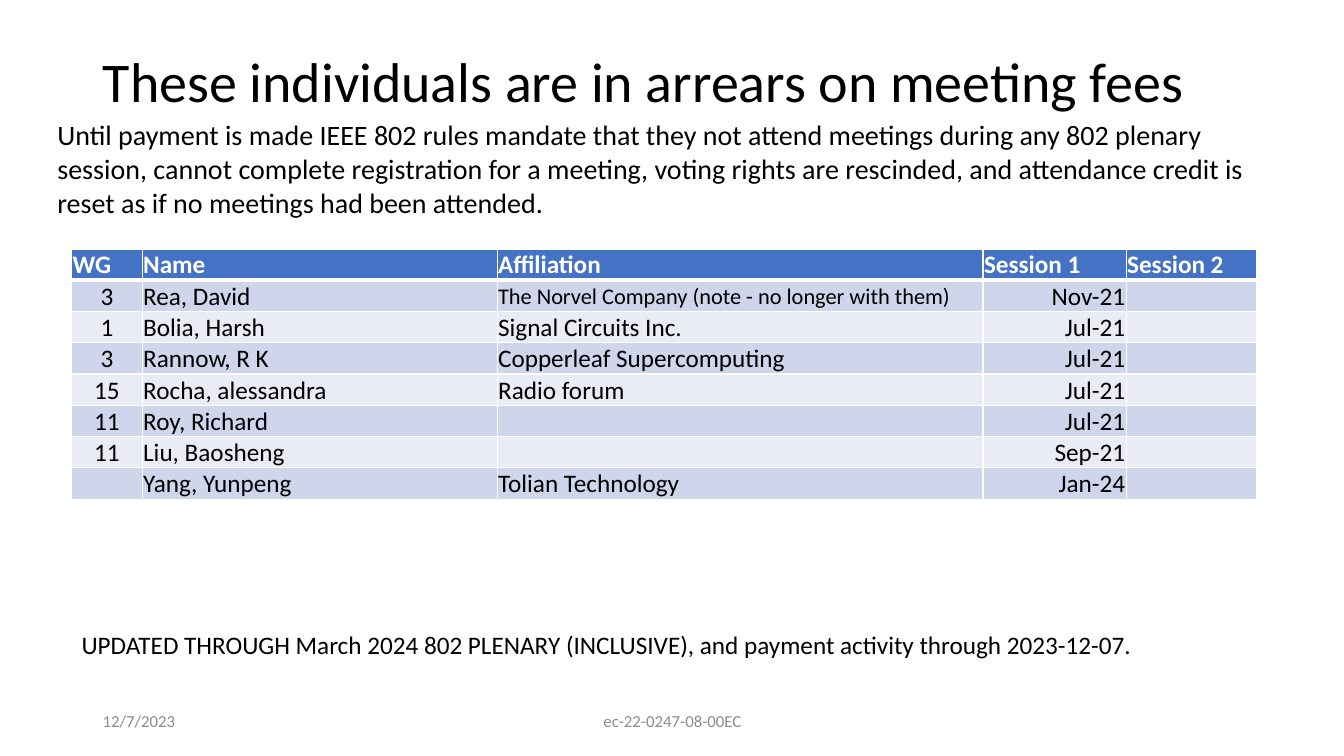
from lxml import etree
from pptx import Presentation
from pptx.dml.color import RGBColor
from pptx.enum.text import MSO_ANCHOR, MSO_AUTO_SIZE, PP_ALIGN
from pptx.oxml.ns import qn
from pptx.util import Inches, Pt

LEFT, CENTER, RIGHT = PP_ALIGN.LEFT, PP_ALIGN.CENTER, PP_ALIGN.RIGHT
TOP, MIDDLE = MSO_ANCHOR.TOP, MSO_ANCHOR.MIDDLE
NO_AUTOFIT = MSO_AUTO_SIZE.NONE

BLACK = RGBColor(0x00, 0x00, 0x00)
WHITE = RGBColor(0xFF, 0xFF, 0xFF)
GRAY = RGBColor(0x8C, 0x8C, 0x8C)
HEADER_BLUE = RGBColor(0x44, 0x72, 0xC4)
BANDS = (RGBColor(0xCF, 0xD5, 0xEA), RGBColor(0xE9, 0xEB, 0xF5))

FONT = "Calibri"
SLIDE_W, SLIDE_H = Inches(13.33), Inches(7.5)
ROW_H = Inches(0.31)
CELL_INSET = Inches(0.01)
LONG_AFFILIATION = 40  # characters; longer entries are set smaller

# Column heading, width in percent of the slide, alignment of the entries
COLUMNS = [
    ("WG", 5.25, CENTER),
    ("Name", 26.41, LEFT),
    ("Affiliation", 36.16, LEFT),
    ("Session 1", 10.65, RIGHT),
    ("Session 2", 9.68, RIGHT),
]
ARREARS = [
    ("3", "Rea, David", "The Norvel Company (note - no longer with them)", "Nov-21", ""),
    ("1", "Bolia, Harsh", "Signal Circuits Inc.", "Jul-21", ""),
    ("3", "Rannow, R K", "Copperleaf Supercomputing", "Jul-21", ""),
    ("15", "Rocha, alessandra", "Radio forum", "Jul-21", ""),
    ("11", "Roy, Richard", "", "Jul-21", ""),
    ("11", "Liu, Baosheng", "", "Sep-21", ""),
    ("", "Yang, Yunpeng", "Tolian Technology", "Jan-24", ""),
]


def across(percent):
    return int(SLIDE_W * percent / 100)


def down(percent):
    return int(SLIDE_H * percent / 100)


def format_paragraph(paragraph, size, color, align=LEFT, bold=False):
    paragraph.alignment = align
    font = paragraph.font
    font.name, font.size, font.bold = FONT, Pt(size), bold
    font.color.rgb = color
    for run in paragraph.runs:
        run.font.name, run.font.size, run.font.bold = FONT, Pt(size), bold
        run.font.color.rgb = color


def add_title(slide, text):
    title = slide.shapes.title
    title.left, title.top = across(6.9), down(5.33)
    title.width, title.height = across(86.27), down(11.6)
    frame = title.text_frame
    frame.text = text
    frame.word_wrap = True
    frame.auto_size = NO_AUTOFIT
    frame.vertical_anchor = MIDDLE
    frame.paragraphs[0].line_spacing = 0.9
    format_paragraph(frame.paragraphs[0], 40, BLACK)


def add_text(slide, text, left, top, width, height, size,
             color=BLACK, align=LEFT, anchor=TOP):
    """Place a text box; position and size are percentages of the slide."""
    box = slide.shapes.add_textbox(
        across(left), down(top), across(width), down(height))
    frame = box.text_frame
    frame.text = text
    frame.word_wrap = True
    frame.vertical_anchor = anchor
    format_paragraph(frame.paragraphs[0], size, color, align)


def set_borders(cell, top=1, bottom=1):
    properties = cell._tc.get_or_add_tcPr()
    for side, points in (("L", 1), ("R", 1), ("T", top), ("B", bottom)):
        line = etree.SubElement(properties, qn(f"a:ln{side}"), w=str(Pt(points)))
        fill = etree.SubElement(line, qn("a:solidFill"))
        etree.SubElement(fill, qn("a:srgbClr"), val=str(WHITE))


def fill_cell(cell, text, background, size, color, align=LEFT, bold=False):
    cell.text_frame.text = text
    cell.vertical_anchor = MIDDLE
    cell.margin_left = cell.margin_right = cell.margin_top = CELL_INSET
    cell.margin_bottom = 0
    cell.fill.solid()
    cell.fill.fore_color.rgb = background
    format_paragraph(cell.text_frame.paragraphs[0], size, color, align, bold)


def add_arrears_table(slide, left, top):
    row_count = len(ARREARS) + 1
    width = across(sum(share for _, share, _ in COLUMNS))
    table = slide.shapes.add_table(
        row_count, len(COLUMNS), across(left), down(top),
        width, ROW_H * row_count).table
    for row in table.rows:
        row.height = ROW_H

    for col, (heading, share, align) in enumerate(COLUMNS):
        table.columns[col].width = across(share)
        header = table.cell(0, col)
        set_borders(header, bottom=3)
        fill_cell(header, heading, HEADER_BLUE, 18, WHITE, bold=True)
        for row, person in enumerate(ARREARS, start=1):
            entry = table.cell(row, col)
            size = 16 if len(person[col]) > LONG_AFFILIATION else 18
            set_borders(entry, top=3 if row == 1 else 1)
            fill_cell(entry, person[col], BANDS[(row - 1) % 2], size, BLACK, align)


def main():
    prs = Presentation()
    prs.slide_width, prs.slide_height = SLIDE_W, SLIDE_H
    slide = prs.slides.add_slide(prs.slide_layouts[5])

    # Title and the rule that applies
    add_title(slide, "These individuals are in arrears on meeting fees")
    add_text(slide,
             "Until payment is made IEEE 802 rules mandate that they not attend "
             "meetings during any 802 plenary session, cannot complete registration "
             "for a meeting, voting rights are rescinded, and attendance credit is "
             "reset as if no meetings had been attended.",
             3.53, 14.93, 91.15, 19.33, 20)

    # Individuals and the sessions they owe for
    add_arrears_table(slide, 5.33, 32.93)
    add_text(slide,
             "UPDATED THROUGH March 2024 802 PLENARY (INCLUSIVE), "
             "and payment activity through 2023-12-07.",
             5.33, 82.53, 88.15, 5.33, 18)

    # Footer
    add_text(slide, "12/7/2023", 6.9, 92.67, 22.51, 5.33, 12, GRAY, LEFT, MIDDLE)
    add_text(slide, "ec-22-0247-08-00EC", 33.16, 92.67, 33.76, 5.33, 12,
             GRAY, CENTER, MIDDLE)

    prs.save("out.pptx")


if __name__ == "__main__":
    main()
